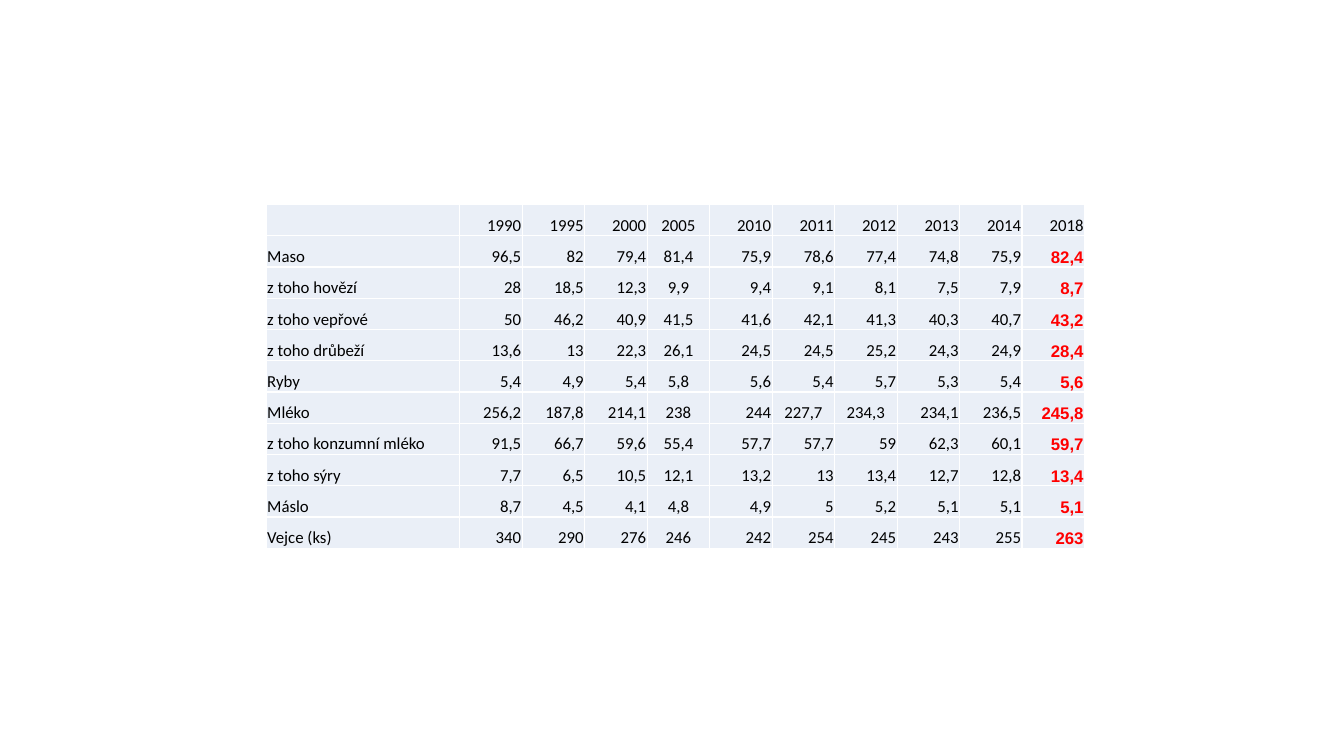
"""Build a slide with a table of yearly food consumption per person."""
from dataclasses import dataclass

from lxml import etree
from pptx import Presentation
from pptx.dml.color import RGBColor
from pptx.enum.text import MSO_ANCHOR, PP_ALIGN
from pptx.oxml import parse_xml
from pptx.util import Inches, Pt

LEFT, CENTER, RIGHT = PP_ALIGN.LEFT, PP_ALIGN.CENTER, PP_ALIGN.RIGHT
BOTTOM = MSO_ANCHOR.BOTTOM
NAMESPACE = "http://schemas.openxmlformats.org/drawingml/2006/main"


@dataclass(frozen=True)
class Theme:
    cell: RGBColor = RGBColor(0xEA, 0xEF, 0xF7)
    text: RGBColor = RGBColor(0, 0, 0)
    latest: RGBColor = RGBColor(0xFF, 0, 0)
    border: str = "FFFFFF"
    border_width: int = Pt(1)
    body_font: str = "Calibri"
    latest_font: str = "Arial"
    size: int = Pt(12)


theme = Theme()

consumption = [
    ("", "1990 1995 2000 2005 2010 2011 2012 2013 2014 2018"),
    ("Maso", "96,5 82 79,4 81,4 75,9 78,6 77,4 74,8 75,9 82,4"),
    ("z toho hovězí", "28 18,5 12,3 9,9 9,4 9,1 8,1 7,5 7,9 8,7"),
    ("z toho vepřové", "50 46,2 40,9 41,5 41,6 42,1 41,3 40,3 40,7 43,2"),
    ("z toho drůbeží", "13,6 13 22,3 26,1 24,5 24,5 25,2 24,3 24,9 28,4"),
    ("Ryby", "5,4 4,9 5,4 5,8 5,6 5,4 5,7 5,3 5,4 5,6"),
    ("Mléko", "256,2 187,8 214,1 238 244 227,7 234,3 234,1 236,5 245,8"),
    ("z toho konzumní mléko", "91,5 66,7 59,6 55,4 57,7 57,7 59 62,3 60,1 59,7"),
    ("z toho sýry", "7,7 6,5 10,5 12,1 13,2 13 13,4 12,7 12,8 13,4"),
    ("Máslo", "8,7 4,5 4,1 4,8 4,9 5 5,2 5,1 5,1 5,1"),
    ("Vejce (ks)", "340 290 276 246 242 254 245 243 255 263"),
]
rows = [[label, *values.split()] for label, values in consumption]
row_count, column_count = len(rows), len(rows[0])
centered_column = 4
centered_cells = {(6, 6), (6, 7)}
label_width, value_width, row_height = Inches(1.92), Inches(0.62), Inches(0.31)


def add_borders(cell):
    """Draw a thin line on every side of a cell."""
    properties = cell._tc.get_or_add_tcPr()
    for side in ("lnL", "lnR", "lnT", "lnB"):
        line = parse_xml(
            f'<a:{side} xmlns:a="{NAMESPACE}" w="{theme.border_width}"/>')
        fill = etree.SubElement(line, f"{{{NAMESPACE}}}solidFill")
        etree.SubElement(fill, f"{{{NAMESPACE}}}srgbClr", val=theme.border)
        properties.append(line)


presentation = Presentation()
presentation.slide_width = Inches(13.33)
presentation.slide_height = Inches(7.5)
slide = presentation.slides.add_slide(presentation.slide_layouts[6])

table = slide.shapes.add_table(
    row_count, column_count, Inches(2.64), Inches(2.03),
    label_width + value_width * (column_count - 1), row_height * row_count).table
table.first_row = False
table.horz_banding = False
for index, column in enumerate(table.columns):
    column.width = value_width if index else label_width

for row_index, row in enumerate(rows):
    table.rows[row_index].height = row_height
    for column_index, text in enumerate(row):
        cell = table.cell(row_index, column_index)
        add_borders(cell)
        cell.fill.solid()
        cell.fill.fore_color.rgb = theme.cell
        cell.vertical_anchor = BOTTOM
        cell.margin_left = cell.margin_right = cell.margin_top = Inches(0.01)
        cell.margin_bottom = 0
        cell.text = text

        paragraph = cell.text_frame.paragraphs[0]
        if column_index == 0:
            paragraph.alignment = LEFT
        elif column_index == centered_column or (row_index, column_index) in centered_cells:
            paragraph.alignment = CENTER
        else:
            paragraph.alignment = RIGHT

        is_latest = row_index > 0 and column_index == column_count - 1
        paragraph.font.size = theme.size
        paragraph.font.bold = is_latest
        paragraph.font.name = theme.latest_font if is_latest else theme.body_font
        paragraph.font.color.rgb = theme.latest if is_latest else theme.text

presentation.save("out.pptx")
